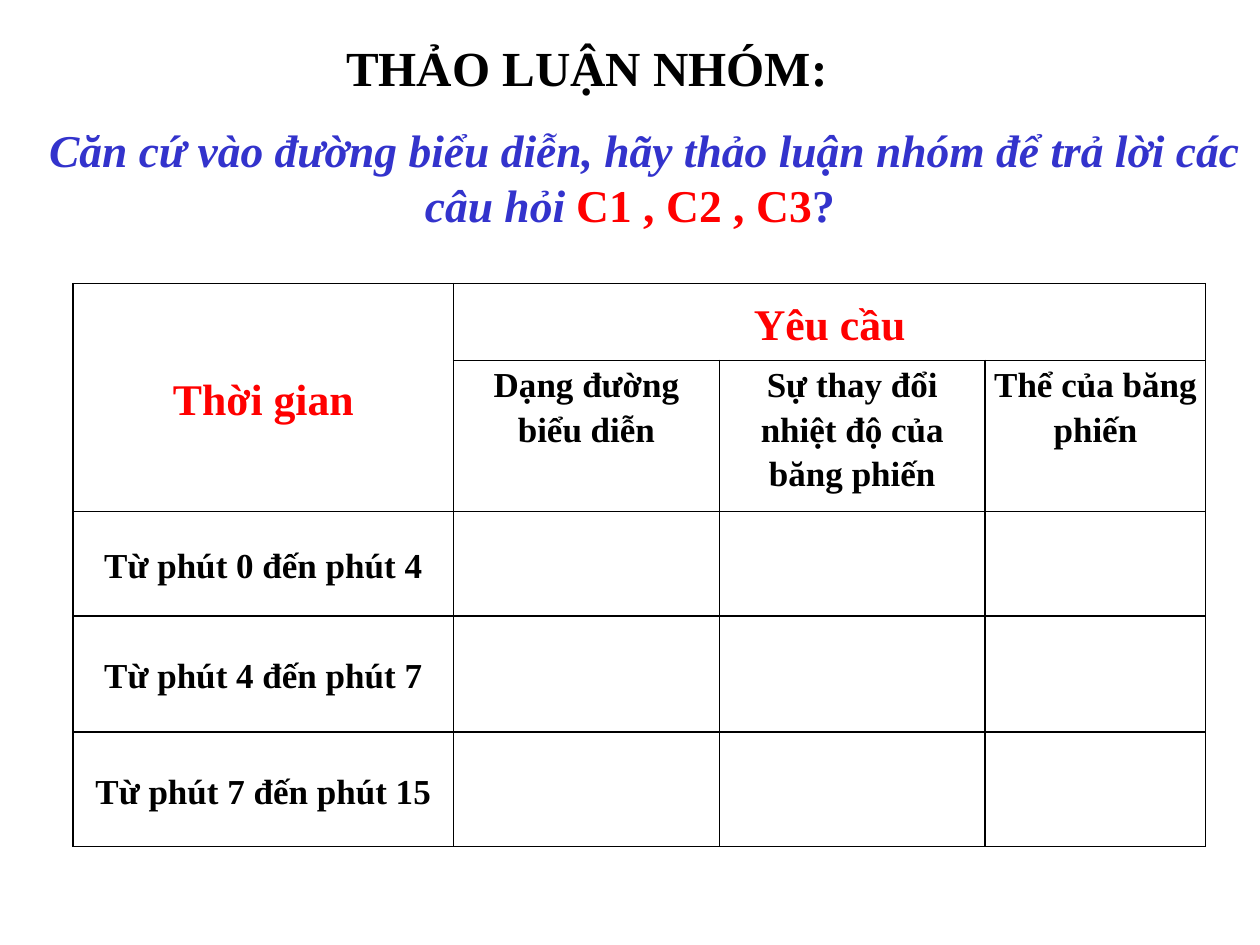
from dataclasses import dataclass

from lxml import etree
from pptx import Presentation
from pptx.dml.color import RGBColor
from pptx.enum.text import MSO_ANCHOR, PP_ALIGN
from pptx.oxml.ns import qn
from pptx.slide import Slide
from pptx.table import Table, _Cell
from pptx.text.text import TextFrame, _Paragraph
from pptx.util import Inches, Pt

CENTER = PP_ALIGN.CENTER
TOP = MSO_ANCHOR.TOP
MIDDLE = MSO_ANCHOR.MIDDLE

BLACK = RGBColor(0x00, 0x00, 0x00)
RED = RGBColor(0xFF, 0x00, 0x00)
BLUE = RGBColor(0x33, 0x33, 0xCC)

FONT = "Times New Roman"
COLUMN_WIDTHS = (3.02, 2.11, 2.11, 1.75)
ROW_HEIGHTS = (0.61, 1.2, 0.83, 0.92, 0.91)
BORDER_SIDES = ("a:lnL", "a:lnR", "a:lnT", "a:lnB")


@dataclass(frozen=True)
class Label:
    row: int
    column: int
    text: str
    size: int = 20
    color: RGBColor = BLACK
    anchor: MSO_ANCHOR = MIDDLE


LABELS = (
    Label(0, 0, "Thời gian", 25, RED),
    Label(0, 1, "Yêu cầu", 25, RED),
    Label(1, 1, "Dạng đường biểu diễn", anchor=TOP),
    Label(1, 2, "Sự thay đổi nhiệt độ của băng phiến", anchor=TOP),
    Label(1, 3, "Thể của băng phiến", anchor=TOP),
    Label(2, 0, "Từ phút 0 đến phút 4"),
    Label(3, 0, "Từ phút 4 đến phút 7"),
    Label(4, 0, "Từ phút 7 đến phút 15"),
)


def style_paragraph(paragraph: _Paragraph, size: int) -> None:
    paragraph.alignment = CENTER
    paragraph.font.name = FONT
    paragraph.font.size = Pt(size)
    paragraph.font.bold = True


def add_text_frame(slide: Slide, left: float, top: float,
                   width: float, height: float) -> TextFrame:
    frame = slide.shapes.add_textbox(
        Inches(left), Inches(top), Inches(width), Inches(height)).text_frame
    frame.word_wrap = True
    return frame


def add_heading(slide: Slide) -> None:
    heading = add_text_frame(slide, 1.08, 0.25, 7.25, 0.57).paragraphs[0]
    heading.text = "THẢO LUẬN NHÓM: "
    style_paragraph(heading, 28)
    heading.font.color.rgb = BLACK


def add_question(slide: Slide) -> None:
    question = add_text_frame(slide, 0, 0.92, 10, 0.97).paragraphs[0]
    style_paragraph(question, 26)
    question._p.get_or_add_pPr().set("indent", str(Inches(0.24)))
    for text, color, italic in (
        ("Căn cứ vào đường biểu diễn, hãy thảo luận nhóm để trả lời các câu hỏi ",
         BLUE, True),
        ("C1 , C2 , C3", RED, False),
        ("?", BLUE, False),
    ):
        run = question.add_run()
        run.text = text
        run.font.color.rgb = color
        run.font.italic = italic


def outline_cell(cell: _Cell) -> None:
    properties = cell._tc.get_or_add_tcPr()
    for side in BORDER_SIDES:
        border = etree.SubElement(properties, qn(side), w=str(Pt(1)))
        fill = etree.SubElement(border, qn("a:solidFill"))
        etree.SubElement(fill, qn("a:srgbClr"), val=str(BLACK))
    cell.fill.background()


def write_label(table: Table, label: Label) -> None:
    cell = table.cell(label.row, label.column)
    cell.vertical_anchor = label.anchor
    cell.margin_left = cell.margin_right = Inches(0.06)
    cell.margin_top = cell.margin_bottom = Inches(0)
    paragraph = cell.text_frame.paragraphs[0]
    paragraph.text = label.text
    paragraph.line_spacing = 1.15
    style_paragraph(paragraph, label.size)
    paragraph.font.color.rgb = label.color


def add_answer_table(slide: Slide) -> None:
    table = slide.shapes.add_table(
        len(ROW_HEIGHTS), len(COLUMN_WIDTHS), Inches(0.58), Inches(2.25),
        Inches(sum(COLUMN_WIDTHS)), Inches(sum(ROW_HEIGHTS))).table
    for column, width in zip(table.columns, COLUMN_WIDTHS):
        column.width = Inches(width)
    for row, height in zip(table.rows, ROW_HEIGHTS):
        row.height = Inches(height)
    for cell in table.iter_cells():
        outline_cell(cell)
    table.cell(0, 0).merge(table.cell(1, 0))
    table.cell(0, 1).merge(table.cell(0, 3))
    for label in LABELS:
        write_label(table, label)


def main() -> None:
    presentation = Presentation()
    presentation.slide_width = Inches(10)
    presentation.slide_height = Inches(7.5)
    slide = presentation.slides.add_slide(presentation.slide_layouts[6])
    add_question(slide)
    add_heading(slide)
    add_answer_table(slide)
    presentation.save("out.pptx")


if __name__ == "__main__":
    main()
